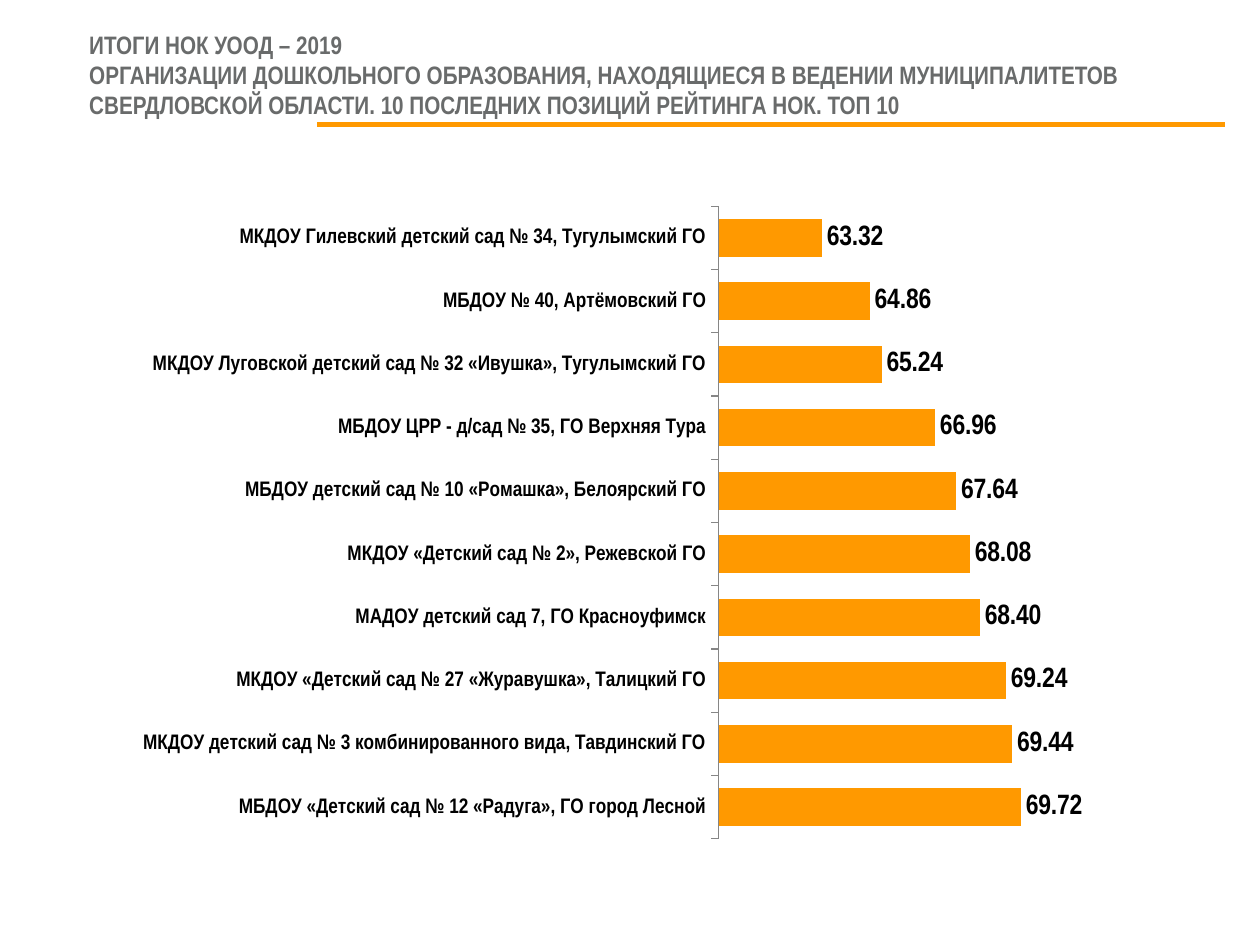
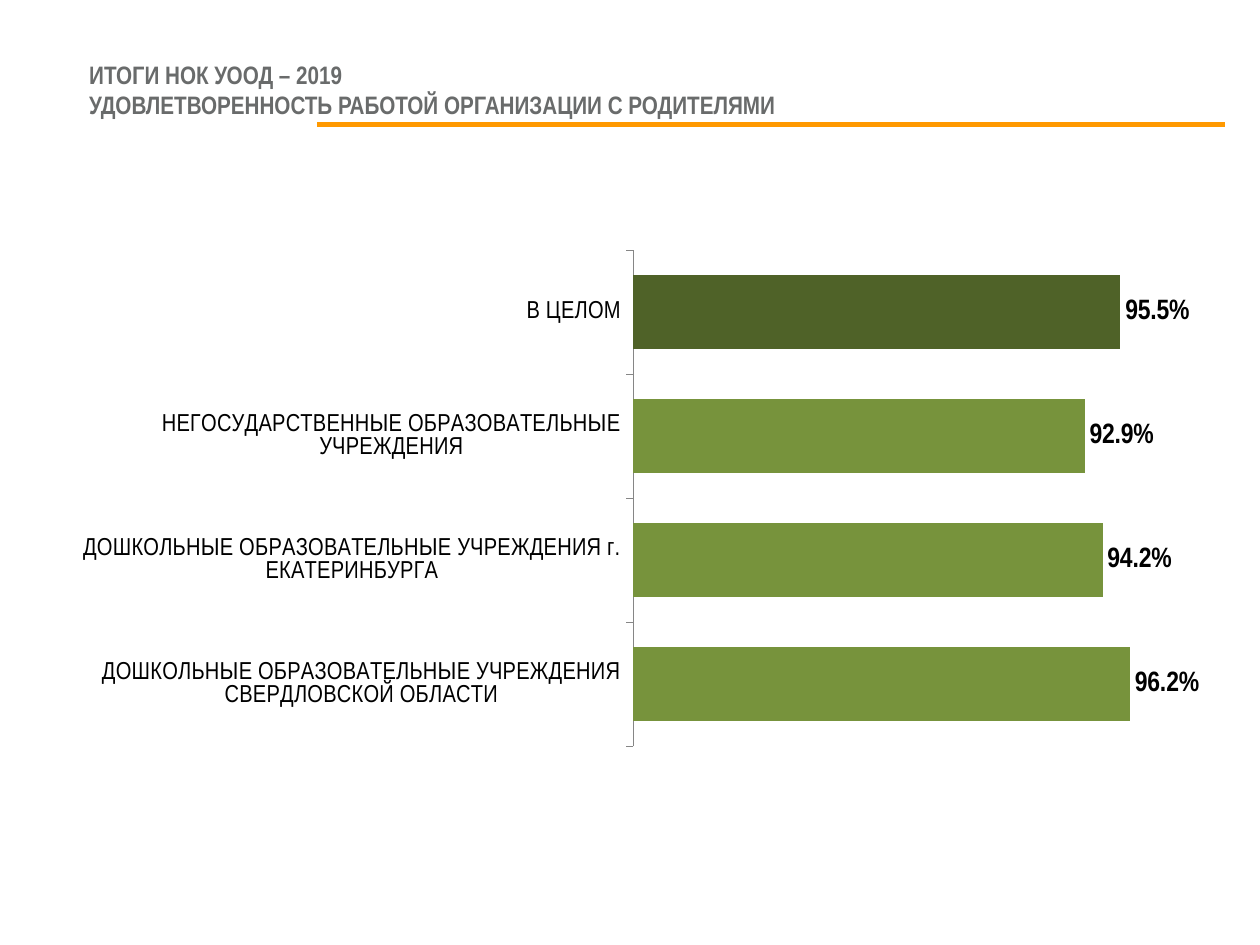
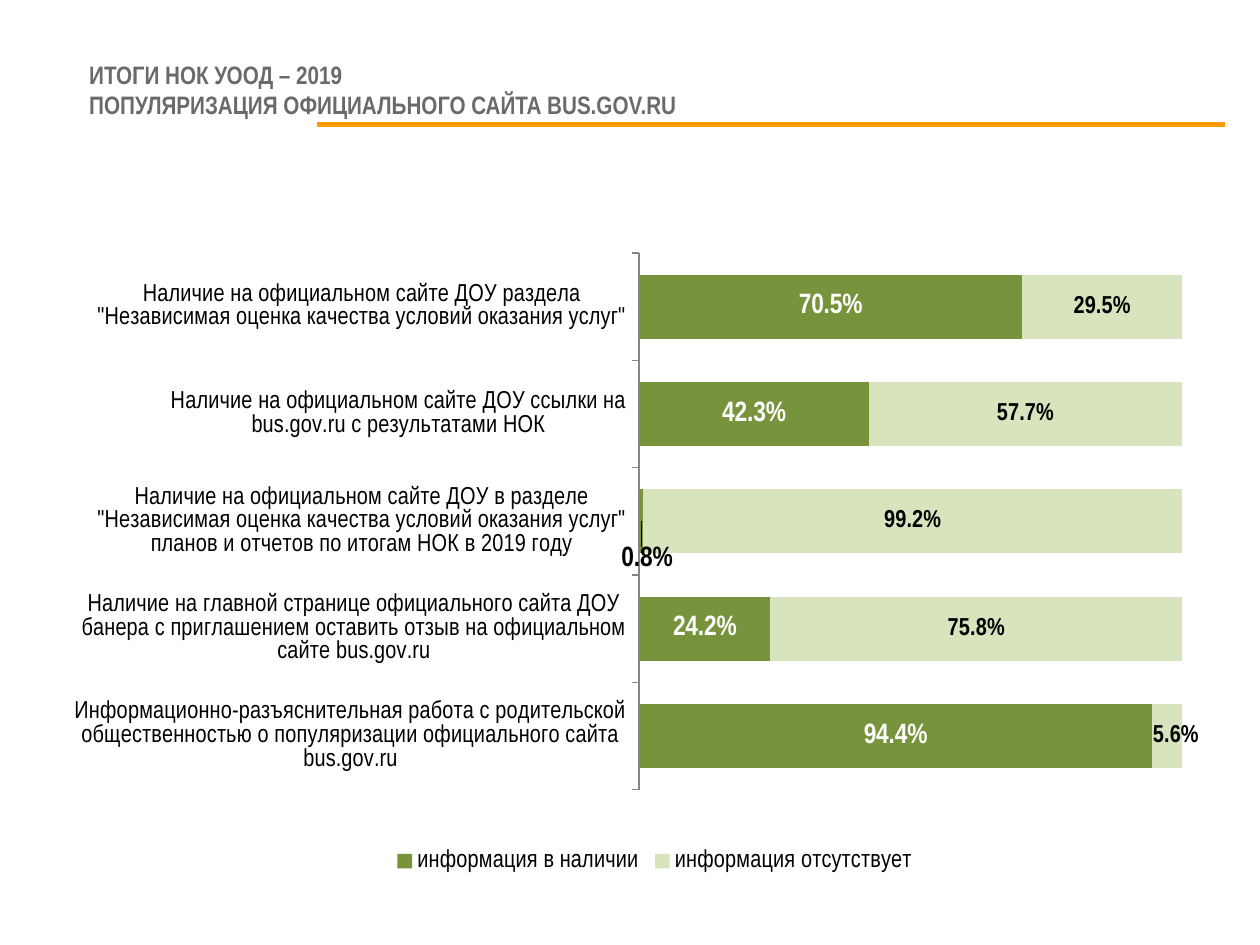
from dataclasses import dataclass
from typing import Optional

from lxml.etree import SubElement
from pptx import Presentation
from pptx.chart.chart import Chart
from pptx.chart.data import CategoryChartData
from pptx.dml.color import RGBColor
from pptx.enum.chart import XL_CHART_TYPE as ChartType
from pptx.enum.chart import XL_LABEL_POSITION as LabelPosition
from pptx.enum.chart import XL_LEGEND_POSITION as LegendPosition
from pptx.enum.chart import XL_TICK_MARK as TickMark
from pptx.enum.shapes import MSO_CONNECTOR as ConnectorType
from pptx.enum.text import MSO_ANCHOR as Anchor
from pptx.oxml import parse_xml
from pptx.oxml.ns import nsdecls, qn
from pptx.slide import Slide
from pptx.util import Cm, Pt

# Shared style
FONT = "Arial Narrow"
ORANGE = RGBColor(0xFF, 0x99, 0x00)
GREEN = RGBColor(0x77, 0x93, 0x3C)
DARK_GREEN = RGBColor(0x4F, 0x62, 0x28)
PALE_GREEN = RGBColor(0xD7, 0xE4, 0xBD)
TITLE_GRAY = RGBColor(0x69, 0x6B, 0x6B)
AXIS_GRAY = RGBColor(0x86, 0x86, 0x86)
BLACK = RGBColor(0x00, 0x00, 0x00)
WHITE = RGBColor(0xFF, 0xFF, 0xFF)
HEADING = "ИТОГИ НОК УООД – 2019"
PERCENT = "0.0%"


@dataclass(frozen=True)
class Box:
    """A frame on the slide, in centimetres."""
    left: float
    top: float
    width: float
    height: float

    def lengths(self) -> tuple[Cm, Cm, Cm, Cm]:
        return Cm(self.left), Cm(self.top), Cm(self.width), Cm(self.height)


@dataclass(frozen=True)
class MovedLabel:
    """A data label shifted from its bar, in centimetres."""
    point: int
    right: float
    down: float


@dataclass(frozen=True)
class BarSeries:
    name: str
    values: tuple[float, ...]
    color: RGBColor
    label_size: int = 16
    label_color: RGBColor = BLACK
    first_color: Optional[RGBColor] = None
    moved_label: Optional[MovedLabel] = None


@dataclass(frozen=True)
class BarSlide:
    subtitle: str
    frame: Box
    plot: Box
    categories: tuple[str, ...]
    series: tuple[BarSeries, ...]
    value_range: tuple[float, float]
    major_unit: float
    number_format: str = PERCENT
    stacked: bool = False
    first_on_top: bool = True
    category_size: int = 14
    category_bold: bool = False


TITLE_BOX = Box(1.55, 1.09, 22.86, 1.45)
RULE = Box(6.4, 2.51, 18.29, 0)

BAR_SLIDES = (
    BarSlide(
        subtitle="ОРГАНИЗАЦИИ ДОШКОЛЬНОГО ОБРАЗОВАНИЯ, НАХОДЯЩИЕСЯ В ВЕДЕНИИ "
                 "МУНИЦИПАЛИТЕТОВ СВЕРДЛОВСКОЙ ОБЛАСТИ. 10 ПОСЛЕДНИХ ПОЗИЦИЙ "
                 "РЕЙТИНГА НОК. ТОП 10",
        frame=Box(0.3, 3.53, 23.8, 14),
        plot=Box(14.49, 4.16, 9.4, 12.75),
        categories=(
            "МБДОУ «Детский сад № 12 «Радуга», ГО город Лесной",
            "МКДОУ детский сад № 3 комбинированного вида, Тавдинский ГО",
            "МКДОУ «Детский сад № 27 «Журавушка», Талицкий ГО",
            "МАДОУ детский сад 7, ГО Красноуфимск",
            "МКДОУ «Детский сад № 2», Режевской ГО",
            "МБДОУ детский сад № 10 «Ромашка», Белоярский ГО",
            "МБДОУ ЦРР - д/сад № 35, ГО Верхняя Тура",
            "МКДОУ Луговской детский сад № 32 «Ивушка», Тугулымский ГО",
            "МБДОУ № 40, Артёмовский ГО",
            "МКДОУ Гилевский детский сад № 34, Тугулымский ГО",
        ),
        series=(BarSeries("Series 1", (69.72, 69.44, 69.24, 68.4, 68.08, 67.64,
                                       66.96, 65.24, 64.86, 63.32), ORANGE),),
        value_range=(60, 75),
        major_unit=10,
        number_format="#,##0.00",
        first_on_top=False,
        category_size=12,
        category_bold=True,
    ),
    BarSlide(
        subtitle="УДОВЛЕТВОРЕННОСТЬ РАБОТОЙ ОРГАНИЗАЦИИ С РОДИТЕЛЯМИ",
        frame=Box(1.5, 4.11, 23.19, 10.95),
        plot=Box(12.77, 5.08, 11.06, 10.01),
        categories=(
            "В ЦЕЛОМ",
            "НЕГОСУДАРСТВЕННЫЕ ОБРАЗОВАТЕЛЬНЫЕ УЧРЕЖДЕНИЯ",
            "ДОШКОЛЬНЫЕ ОБРАЗОВАТЕЛЬНЫЕ УЧРЕЖДЕНИЯ г. ЕКАТЕРИНБУРГА",
            "ДОШКОЛЬНЫЕ ОБРАЗОВАТЕЛЬНЫЕ УЧРЕЖДЕНИЯ СВЕРДЛОВСКОЙ ОБЛАСТИ",
        ),
        series=(BarSeries("Series 1", (0.955, 0.929, 0.942, 0.962), GREEN,
                          first_color=DARK_GREEN),),
        value_range=(0.6, 1),
        major_unit=0.1,
    ),
    BarSlide(
        subtitle="ПОПУЛЯРИЗАЦИЯ ОФИЦИАЛЬНОГО САЙТА BUS.GOV.RU",
        frame=Box(1.5, 4.11, 23.19, 13.59),
        plot=Box(12.77, 5.1, 11.06, 10.82),
        categories=(
            'Наличие на официальном сайте ДОУ раздела "Независимая оценка '
            'качества условий оказания услуг"',
            "Наличие на официальном сайте ДОУ ссылки на bus.gov.ru "
            "с результатами НОК",
            'Наличие на официальном сайте ДОУ в разделе "Независимая оценка '
            'качества условий оказания услуг" планов и отчетов по итогам НОК '
            'в 2019 году',
            "Наличие на главной странице официального сайта ДОУ банера "
            "с приглашением оставить отзыв на официальном сайте bus.gov.ru",
            "Информационно-разъяснительная работа с родительской "
            "общественностью о популяризации официального сайта bus.gov.ru",
        ),
        series=(
            BarSeries("информация в наличии", (0.705, 0.423, 0.008, 0.242, 0.944),
                      GREEN, label_color=WHITE,
                      moved_label=MovedLabel(2, 0.12, 0.77)),
            BarSeries("информация отсутствует", (0.295, 0.577, 0.992, 0.758, 0.056),
                      PALE_GREEN, label_size=14,
                      moved_label=MovedLabel(4, 0.18, 0)),
        ),
        value_range=(0, 1),
        major_unit=0.1,
        stacked=True,
    ),
)


def style_font(font, size: float, color: RGBColor, bold: bool) -> None:
    font.name = FONT
    font.size = Pt(size)
    font.bold = bold
    font.color.rgb = color


def manual_layout(**settings: object):
    """Build a chart layout element from its named settings, in schema order."""
    layout = parse_xml(f"<c:layout {nsdecls('c')}><c:manualLayout/></c:layout>")
    for name, value in settings.items():
        SubElement(layout[0], qn(f"c:{name}")).set("val", str(value))
    return layout


def add_title(slide: Slide, subtitle: str) -> None:
    text_frame = slide.shapes.add_textbox(*TITLE_BOX.lengths()).text_frame
    text_frame.word_wrap = True
    text_frame.vertical_anchor = Anchor.BOTTOM
    paragraph = text_frame.paragraphs[0]
    for index, text in enumerate((HEADING, subtitle)):
        if index:
            paragraph.add_line_break()
        run = paragraph.add_run()
        run.text = text
        style_font(run.font, 14.4, TITLE_GRAY, True)


def add_rule(slide: Slide) -> None:
    left, top, width, height = RULE.lengths()
    connector = slide.shapes.add_connector(
        ConnectorType.STRAIGHT, left, top, left + width, top + height)
    connector.line.color.rgb = ORANGE
    connector.line.width = Pt(3)
    SubElement(connector.element.spPr, qn("a:effectLst"))


def place_plot(chart: Chart, frame: Box, plot: Box) -> None:
    plot_area = chart.element.find(".//" + qn("c:plotArea"))
    for layout in plot_area.findall(qn("c:layout")):
        plot_area.remove(layout)
    plot_area.insert(0, manual_layout(
        layoutTarget="inner", xMode="edge", yMode="edge",
        x=(plot.left - frame.left) / frame.width,
        y=(plot.top - frame.top) / frame.height,
        w=plot.width / frame.width,
        h=plot.height / frame.height))


def style_axes(chart: Chart, content: BarSlide) -> None:
    category_axis = chart.category_axis
    category_axis.reverse_order = content.first_on_top
    category_axis.has_major_gridlines = False
    category_axis.major_tick_mark = TickMark.OUTSIDE
    category_axis.minor_tick_mark = TickMark.NONE
    category_axis.format.line.color.rgb = AXIS_GRAY
    category_axis.format.line.width = Pt(0.75)
    style_font(category_axis.tick_labels.font, content.category_size, BLACK,
               content.category_bold)

    value_axis = chart.value_axis
    value_axis.minimum_scale, value_axis.maximum_scale = content.value_range
    value_axis.major_unit = content.major_unit
    value_axis.has_major_gridlines = False
    value_axis.visible = False


def style_series(chart: Chart, index: int, content: BarSlide) -> None:
    look = content.series[index]
    series = chart.plots[0].series[index]
    series.invert_if_negative = False
    series.format.fill.solid()
    series.format.fill.fore_color.rgb = look.color
    if look.first_color is not None:
        fill = series.points[0].format.fill
        fill.solid()
        fill.fore_color.rgb = look.first_color

    # Value labels
    position = LabelPosition.CENTER if content.stacked else LabelPosition.OUTSIDE_END
    labels = series.data_labels
    labels.show_value = True
    labels.number_format = content.number_format
    labels.number_format_is_linked = False
    labels.position = position
    style_font(labels.font, look.label_size, look.label_color, True)

    # Label too wide for its bar
    moved = look.moved_label
    if moved is not None:
        label = series.points[moved.point].data_label
        style_font(label.font, look.label_size, BLACK, True)
        label.position = position
        label_index = chart.element.xpath(
            f'.//c:ser[c:idx/@val="{index}"]'
            f'//c:dLbl/c:idx[@val="{moved.point}"]')[0]
        label_index.addnext(manual_layout(
            x=moved.right / content.frame.width,
            y=moved.down / content.frame.height))


def add_bar_chart(slide: Slide, content: BarSlide) -> None:
    chart_data = CategoryChartData(number_format=content.number_format)
    chart_data.categories = content.categories
    for series in content.series:
        chart_data.add_series(series.name, series.values)
    chart_type = ChartType.BAR_STACKED if content.stacked else ChartType.BAR_CLUSTERED
    chart = slide.shapes.add_chart(
        chart_type, *content.frame.lengths(), chart_data).chart
    chart.has_title = False
    style_font(chart.font, 14, BLACK, False)

    bars = chart.plots[0]
    bars.gap_width = 68
    bars.overlap = 100 if content.stacked else 0
    bars.vary_by_categories = False

    chart.has_legend = content.stacked
    if content.stacked:
        chart.legend.position = LegendPosition.BOTTOM
        chart.legend.include_in_layout = False

    place_plot(chart, content.frame, content.plot)
    style_axes(chart, content)
    for index in range(len(content.series)):
        style_series(chart, index, content)


def main() -> None:
    presentation = Presentation()
    presentation.slide_width, presentation.slide_height = Cm(25.4), Cm(19.05)
    blank_layout = presentation.slide_layouts[6]
    for content in BAR_SLIDES:
        slide = presentation.slides.add_slide(blank_layout)
        add_title(slide, content.subtitle)
        add_rule(slide)
        add_bar_chart(slide, content)
    presentation.save("out.pptx")


if __name__ == "__main__":
    main()
